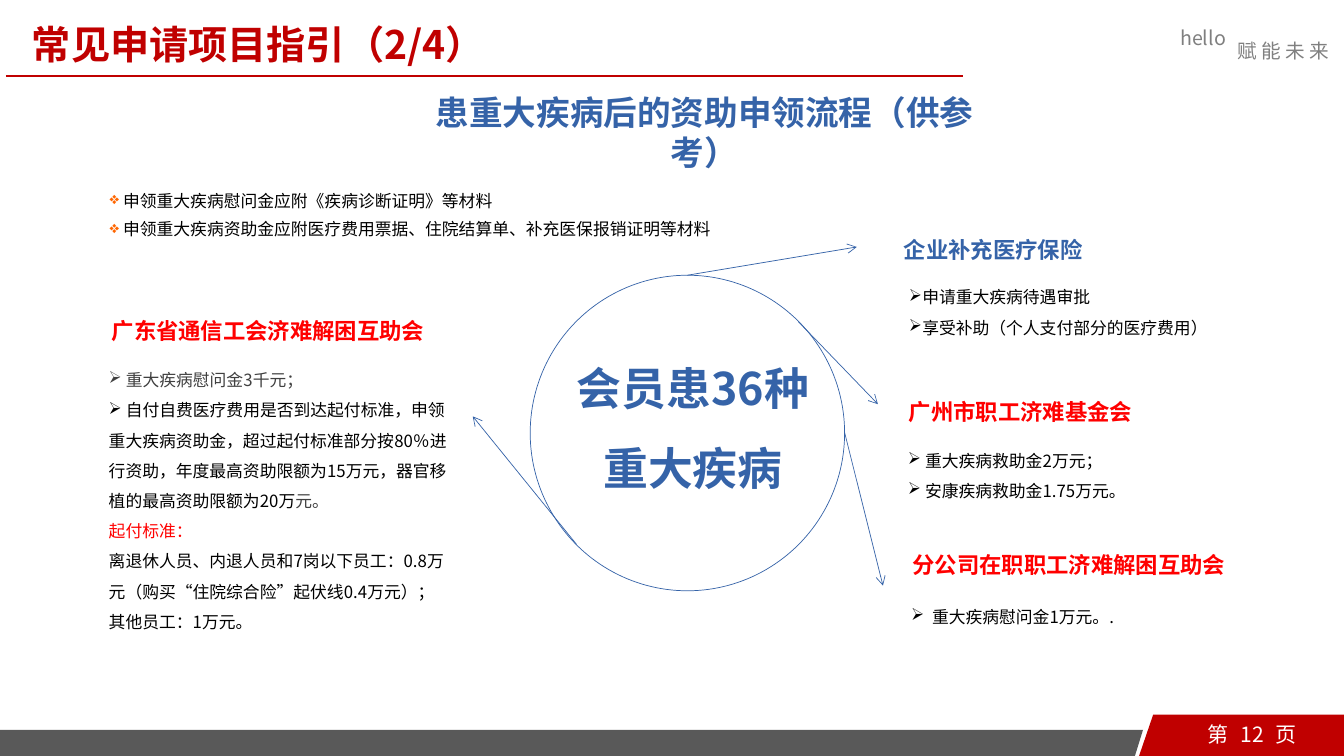
from lxml.etree import SubElement
from pptx import Presentation
from pptx.dml.color import RGBColor
from pptx.enum.shapes import MSO_CONNECTOR, MSO_SHAPE
from pptx.enum.text import PP_ALIGN
from pptx.oxml.ns import qn
from pptx.util import Pt

FONT = "Noto Sans CJK SC"
WHITE = RGBColor(0xFF, 0xFF, 0xFF)
BLACK = RGBColor(0x00, 0x00, 0x00)
DARK = RGBColor(0x40, 0x40, 0x40)
BAR_GRAY = RGBColor(0x59, 0x59, 0x59)
HELLO_GRAY = RGBColor(0x7F, 0x7F, 0x7F)
SLOGAN_GRAY = RGBColor(0x80, 0x80, 0x80)
CRIMSON = RGBColor(0xC0, 0x00, 0x00)
RED = RGBColor(0xFF, 0x00, 0x00)
BLUE = RGBColor(0x35, 0x63, 0xA8)
ORANGE = RGBColor(0xFF, 0x66, 0x00)
ARROW_MARK = "➢"


def add_bullet(paragraph, mark, color=None, hang=0):
    props = paragraph._p.get_or_add_pPr()
    props.set("marL", str(Pt(hang)))
    props.set("indent", str(-Pt(hang)))
    if color is not None:
        SubElement(SubElement(props, qn("a:buClr")), qn("a:srgbClr")).set("val", str(color))
    SubElement(props, qn("a:buChar")).set("char", mark)


def add_run(paragraph, text, size, color, bold=False, spacing=0):
    run = paragraph.add_run()
    run.text = text
    run.font.size = Pt(size)
    run.font.bold = bold
    run.font.name = FONT
    run.font.color.rgb = color
    props = run._r.get_or_add_rPr()
    SubElement(props, qn("a:ea")).set("typeface", FONT)
    if spacing:
        props.set("spc", str(spacing * 100))


def add_text_frame(slide, left, top, width, height, wrap=True):
    frame = slide.shapes.add_textbox(Pt(left), Pt(top), Pt(width), Pt(height)).text_frame
    frame.word_wrap = wrap
    return frame


def add_label(slide, box, lines, size, color, bold=True, align=PP_ALIGN.LEFT,
              line_spacing=None, wrap=True, spacing=0):
    frame = add_text_frame(slide, *box, wrap)
    for i, line in enumerate(lines):
        paragraph = frame.add_paragraph() if i else frame.paragraphs[0]
        paragraph.alignment = align
        if line_spacing:
            paragraph.line_spacing = line_spacing
        add_run(paragraph, line, size, color, bold, spacing)


def add_details(slide, box, items, line_spacing=1.5, gap=0, mark_color=None, hang=0, wrap=True):
    """Each item is (bullet mark or None, [(text, color), ...])."""
    frame = add_text_frame(slide, *box, wrap)
    for i, (mark, parts) in enumerate(items):
        paragraph = frame.add_paragraph() if i else frame.paragraphs[0]
        paragraph.line_spacing = line_spacing
        if i and gap:
            paragraph.space_before = Pt(gap)
        if mark:
            add_bullet(paragraph, mark, mark_color, hang)
        for text, color in parts:
            add_run(paragraph, text, 12, color)


def add_outline(slide, points, color):
    builder = slide.shapes.build_freeform(Pt(points[0][0]), Pt(points[0][1]))
    builder.add_line_segments([(Pt(x), Pt(y)) for x, y in points[1:]], close=True)
    band = builder.convert_to_shape()
    band.shadow.inherit = False
    band.fill.solid()
    band.fill.fore_color.rgb = color
    band.line.fill.background()


def add_line(slide, start, end, color, width, arrow=False):
    line = slide.shapes.add_connector(
        MSO_CONNECTOR.STRAIGHT, Pt(start[0]), Pt(start[1]), Pt(end[0]), Pt(end[1]))
    line.line.color.rgb = color
    line.line.width = Pt(width)
    if arrow:
        SubElement(line.line._get_or_add_ln(), qn("a:tailEnd")).set("type", "arrow")
    SubElement(line._element.spPr, qn("a:effectLst"))


def add_frame(slide):
    # Footer bands and page number
    add_outline(slide, [(0, 540), (810.7, 540), (816.5, 521.3), (0, 521.3)], BAR_GRAY)
    add_outline(slide, [(823.7, 510.5), (813.6, 540), (960, 540), (960, 510.5)], CRIMSON)
    page = add_text_frame(slide, 840, 511.9, 109, 26.6).paragraphs[0]
    page.alignment = PP_ALIGN.CENTER
    for text, spacing in (("第", 0), (" ", 5), ("12", 0), (" ", 5), ("页", 0)):
        add_run(page, text, 15, WHITE, spacing=spacing)

    # Header slogan, title and rule
    add_label(slide, (835.9, 15.1, 47.5, 24.5), ["hello"], 14, HELLO_GRAY, False, wrap=False)
    add_label(slide, (877, 24.5, 83.5, 24.5), ["赋能未来"], 14, SLOGAN_GRAY, False,
              wrap=False, spacing=3)
    add_line(slide, (4.3, 54), (687.6, 54), CRIMSON, 1.5)
    add_label(slide, (15.8, 10.8, 681.8, 41), ["常见申请项目指引（2/4）"], 28, CRIMSON)


def add_center(slide):
    circle = slide.shapes.add_shape(
        MSO_SHAPE.OVAL, Pt(378.7), Pt(196.6), Pt(224.6), Pt(225.4))
    circle.shadow.inherit = False
    circle.fill.background()
    circle.line.color.rgb = BLUE
    circle.line.width = Pt(0.5)
    add_label(slide, (393.1, 234.7, 203.8, 123.8), ["会员患36种", "重大疾病"], 32, BLUE,
              align=PP_ALIGN.CENTER, line_spacing=1.5)

    # Arrows from the circle to each source of support
    for start, end in (((491, 196.6), (612, 176.4)), ((570.2, 229.7), (627.1, 288.7)),
                       ((603.3, 308.9), (630.7, 418.3)), ((411.8, 388.8), (337.7, 297.4))):
        add_line(slide, start, end, BLUE, 0.5, arrow=True)


def main():
    prs = Presentation()
    prs.slide_width, prs.slide_height = Pt(960), Pt(540)
    slide = prs.slides.add_slide(prs.slide_layouts[6])
    add_frame(slide)

    # Heading and required documents
    add_label(slide, (289.4, 61.9, 427.7, 36), ["患重大疾病后的资助申领流程（供参考）"], 24, BLUE,
              align=PP_ALIGN.CENTER)
    add_details(slide, (71.3, 132.5, 473.8, 43.9), [
        ("❖", [(" 申领重大疾病慰问金应附《疾病诊断证明》等材料", BLACK)]),
        ("❖", [(" 申领重大疾病资助金应附医疗费用票据、住院结算单、补充医保报销证明等材料", BLACK)]),
    ], line_spacing=1, gap=6, mark_color=ORANGE)

    add_center(slide)

    # Provincial mutual aid society
    add_label(slide, (66.2, 223.2, 250.6, 26.6), ["广东省通信工会济难解困互助会"], 16, RED,
              align=PP_ALIGN.CENTER)
    add_details(slide, (70.6, 253.4, 259.2, 203.8), [
        (ARROW_MARK, [(" 重大疾病慰问金3千元；", DARK)]),
        (ARROW_MARK, [(" 自付自费医疗费用是否到达起付标准，申领重大疾病资助金，超过起付标准部分按80％"
                       "进行资助，年度最高资助限额为15万元，器官移植的最高资助限额为20万", BLACK),
                      ("元。", DARK)]),
        (None, [("起付标准：", RED)]),
        (None, [("离退休人员、内退人员和7岗以下员工：0.8万元（购买“住院综合险”起伏线0.4万元）；", BLACK)]),
        (None, [("其他员工：1万元。", BLACK)]),
    ])

    # Supplementary medical insurance
    add_label(slide, (638.6, 164.9, 231.1, 26.6), ["企业补充医疗保险"], 16, BLUE)
    add_details(slide, (642.2, 194.4, 230.4, 51.1), [
        (ARROW_MARK, [("申请重大疾病待遇审批", BLACK)]),
        (ARROW_MARK, [("享受补助（个人支付部分的医疗费用）", BLACK)]),
    ], wrap=False)

    # City relief foundation
    add_label(slide, (642.2, 271.4, 187.2, 36), ["广州市职工济难基金会"], 16, RED, line_spacing=1.5)
    add_details(slide, (641.5, 311, 247.7, 51.1), [
        (ARROW_MARK, [(" 重大疾病救助金2万元；", BLACK)]),
        (ARROW_MARK, [(" 安康疾病救助金1.75万元。", BLACK)]),
    ])

    # Branch mutual aid society
    add_label(slide, (630.7, 390.2, 265.7, 26.6), ["分公司在职职工济难解困互助会"], 16, RED,
              align=PP_ALIGN.CENTER)
    add_details(slide, (643.7, 422.6, 198.7, 28.8), [
        (ARROW_MARK, [("重大疾病慰问金1万元。.", BLACK)]),
    ], hang=15)

    prs.save("out.pptx")


if __name__ == "__main__":
    main()
